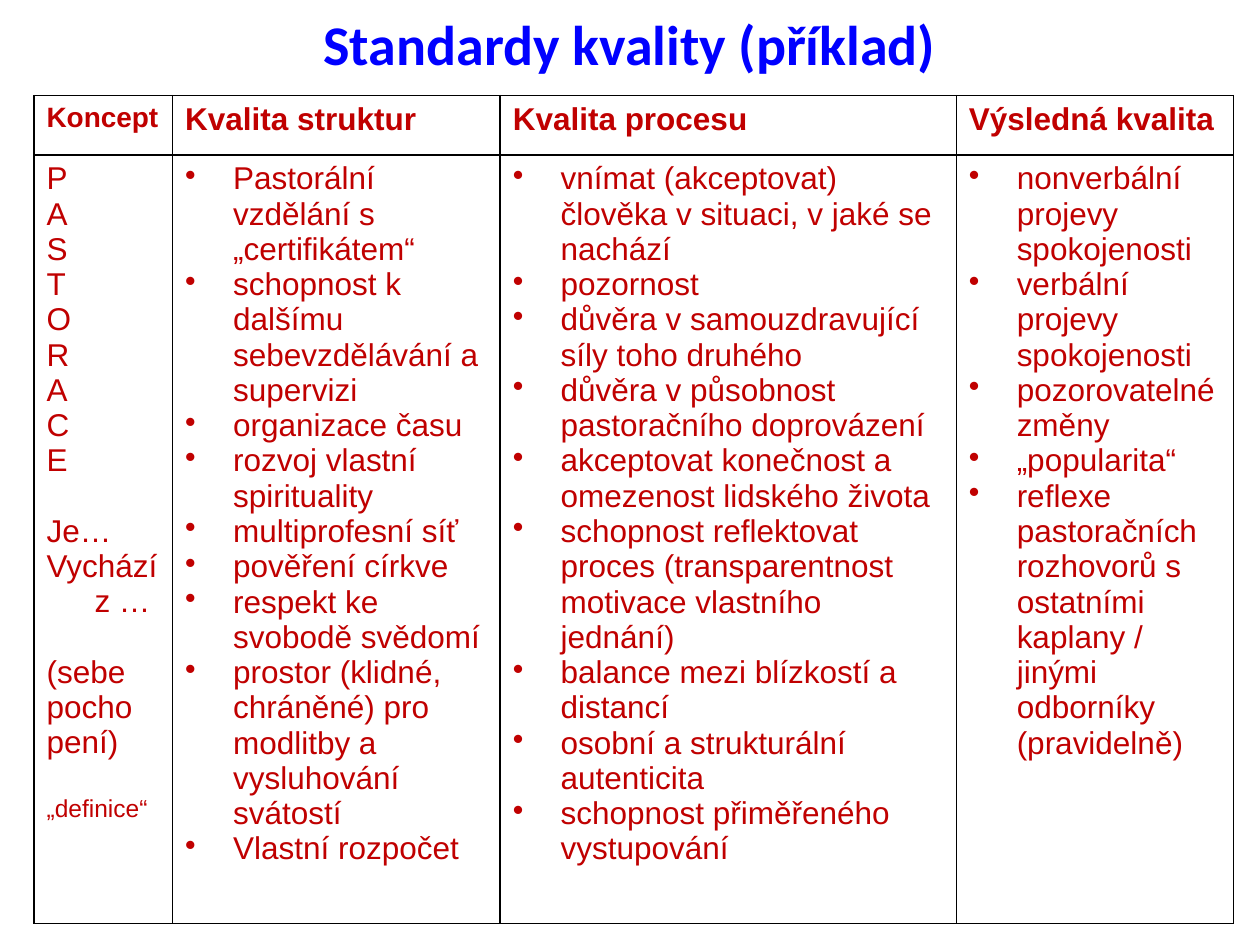
from dataclasses import dataclass

from lxml.etree import SubElement
from pptx import Presentation
from pptx.dml.color import RGBColor
from pptx.enum.text import MSO_ANCHOR, PP_ALIGN
from pptx.oxml import parse_xml
from pptx.oxml.ns import nsdecls, qn
from pptx.util import Inches, Pt

BLUE = RGBColor(0x00, 0x00, 0xFF)
RED = RGBColor(0xC0, 0x00, 0x00)
BLACK = RGBColor(0x00, 0x00, 0x00)
HANGING = Inches(0.38)
BODY_SIZE = 18
LINE_GAP = Pt(20)
HEADER_HEIGHT, BODY_HEIGHT = Inches(0.47), Inches(6.1)


@dataclass(frozen=True)
class Entry:
    text: str
    size: int = BODY_SIZE
    bold: bool = False
    bullet: bool = False
    gap_before: bool = False


@dataclass(frozen=True)
class Column:
    width: float
    heading: Entry
    entries: list[Entry]


def bullets(*texts: str) -> list[Entry]:
    return [Entry(text, bullet=True) for text in texts]


COLUMNS = [
    Column(1.1, Entry("Koncept", size=16, bold=True), [
        *(Entry(letter) for letter in "PASTORACE"),
        Entry("Je…", gap_before=True),
        Entry("Vychází z …"),
        Entry("(sebe", gap_before=True),
        Entry("pocho"),
        Entry("pení)"),
        Entry("„definice“", size=14, gap_before=True),
    ]),
    Column(2.6, Entry("Kvalita struktur", bold=True), bullets(
        "Pastorální vzdělání s „certifikátem“",
        "schopnost k dalšímu sebevzdělávání a supervizi",
        "organizace času",
        "rozvoj vlastní spirituality",
        "multiprofesní síť",
        "pověření církve",
        "respekt ke svobodě svědomí",
        "prostor (klidné, chráněné) pro modlitby a vysluhování svátostí",
        "Vlastní rozpočet",
    )),
    Column(3.62, Entry("Kvalita procesu", bold=True), bullets(
        "vnímat (akceptovat) člověka v situaci, v jaké se nachází",
        "pozornost",
        "důvěra v samouzdravující síly toho druhého",
        "důvěra v působnost pastoračního doprovázení",
        "akceptovat konečnost a omezenost lidského života",
        "schopnost reflektovat proces (transparentnost motivace vlastního jednání)",
        "balance mezi blízkostí a distancí",
        "osobní a strukturální autenticita",
        "schopnost přiměřeného vystupování",
    )),
    Column(2.2, Entry("Výsledná kvalita", bold=True), bullets(
        "nonverbální projevy spokojenosti",
        "verbální projevy spokojenosti",
        "pozorovatelné změny",
        "„popularita“",
        "reflexe pastoračních rozhovorů s ostatními kaplany / jinými odborníky (pravidelně)",
    )),
]


def add_borders(cell) -> None:
    properties = cell._tc.get_or_add_tcPr()
    for position, side in enumerate(("lnL", "lnR", "lnT", "lnB")):
        properties.insert(position, parse_xml(
            f'<a:{side} {nsdecls("a")} w="{Pt(1)}"><a:solidFill>'
            f'<a:srgbClr val="{BLACK}"/></a:solidFill></a:{side}>'))


def write_entry(paragraph, entry: Entry) -> None:
    paragraph.text = entry.text
    font = paragraph.font
    font.name, font.size, font.bold = "Arial", Pt(entry.size), entry.bold
    font.color.rgb = RED
    if entry.gap_before:
        paragraph.space_before = LINE_GAP
    properties = paragraph._p.get_or_add_pPr()
    properties.set("marL", str(HANGING))
    properties.set("indent", str(-HANGING))
    if entry.bullet:
        mark = SubElement(properties, qn("a:buChar"), char="•")
        properties.remove(mark)
        properties.find(qn("a:defRPr")).addprevious(mark)


def fill_cell(cell, entries: list[Entry]) -> None:
    cell.fill.background()
    add_borders(cell)
    frame = cell.text_frame
    for index, entry in enumerate(entries):
        paragraph = frame.add_paragraph() if index else frame.paragraphs[0]
        write_entry(paragraph, entry)


def add_title(slide) -> None:
    title = slide.shapes.add_textbox(Inches(0.5), 0, Inches(9), Inches(0.68))
    frame = title.text_frame
    frame.word_wrap = True
    frame.vertical_anchor = MSO_ANCHOR.MIDDLE
    heading = frame.paragraphs[0]
    heading.text = "Standardy kvality (příklad)"
    heading.alignment = PP_ALIGN.CENTER
    heading.font.name, heading.font.size, heading.font.bold = "Calibri", Pt(32), True
    heading.font.color.rgb = BLUE


def add_standards(slide) -> None:
    total_width = Inches(sum(column.width for column in COLUMNS))
    table = slide.shapes.add_table(
        2, len(COLUMNS), Inches(0.27), Inches(0.76),
        total_width, HEADER_HEIGHT + BODY_HEIGHT).table
    table.first_row = table.horz_banding = False
    table.rows[0].height, table.rows[1].height = HEADER_HEIGHT, BODY_HEIGHT
    for index, column in enumerate(COLUMNS):
        table.columns[index].width = Inches(column.width)
        fill_cell(table.cell(0, index), [column.heading])
        fill_cell(table.cell(1, index), column.entries)


def main() -> None:
    presentation = Presentation()
    presentation.slide_width, presentation.slide_height = Inches(10), Inches(7.5)
    slide = presentation.slides.add_slide(presentation.slide_layouts[6])
    add_title(slide)
    add_standards(slide)
    presentation.save("out.pptx")


if __name__ == "__main__":
    main()
